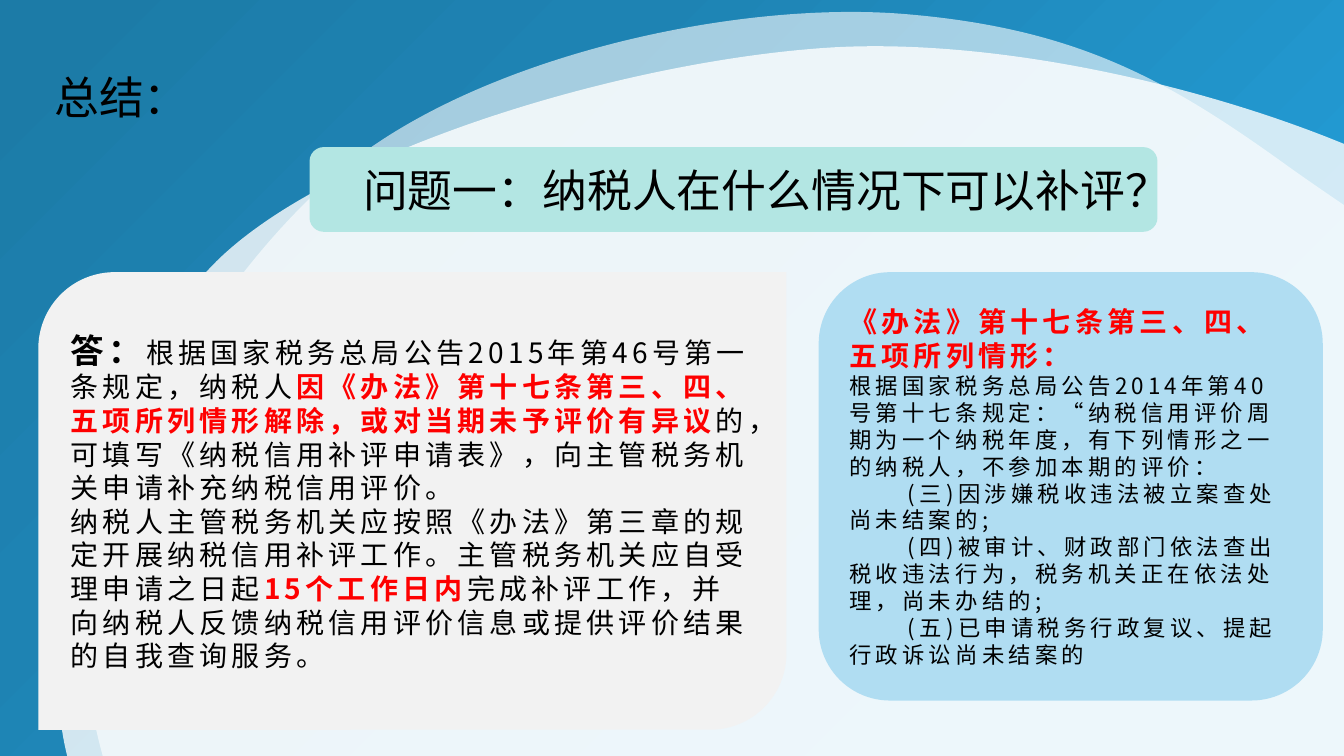
from lxml import etree
from pptx import Presentation
from pptx.dml.color import RGBColor
from pptx.enum.shapes import MSO_SHAPE
from pptx.enum.text import MSO_ANCHOR, PP_ALIGN
from pptx.oxml.ns import qn
from pptx.util import Inches, Pt

FONT = "Noto Sans CJK SC"
BLACK = RGBColor(0x00, 0x00, 0x00)
RED = RGBColor(0xFE, 0x00, 0x00)
WHITE = RGBColor(0xFF, 0xFF, 0xFF)
GREY = RGBColor(0xF2, 0xF2, 0xF2)
MINT = RGBColor(0xB3, 0xE6, 0xE3)
SKY = RGBColor(0xB0, 0xDD, 0xF2)
RECT = MSO_SHAPE.RECTANGLE
ROUNDED = MSO_SHAPE.ROUNDED_RECTANGLE
DIAGONAL = MSO_SHAPE.ROUND_2_DIAG_RECTANGLE
LEFT = PP_ALIGN.LEFT
MIDDLE = MSO_ANCHOR.MIDDLE
CARD_TOP = 2.7
CLAUSE_INDENT = 0.58

prs = Presentation()
prs.slide_width, prs.slide_height = Inches(13.33), Inches(7.5)
slide = prs.slides.add_slide(prs.slide_layouts[6])
shapes = slide.shapes


def write(frame, paragraphs, spacing=0):
    """Fill frame with (size, first-line indent, [(text, colour, bold, own size)]) rows."""
    frame.word_wrap = True
    for index, (size, indent, runs) in enumerate(paragraphs):
        paragraph = frame.paragraphs[0] if index == 0 else frame.add_paragraph()
        paragraph.alignment = LEFT
        if indent:
            paragraph._p.get_or_add_pPr().set("indent", str(Inches(indent)))
        paragraph.font.name = FONT
        paragraph.font.size = Pt(size)
        for text, colour, bold, own_size in runs:
            run = paragraph.add_run()
            run.text = text
            run.font.size = Pt(own_size or size)
            run.font.bold = bold
            run.font.color.rgb = colour
            run.font.name = FONT
            properties = run._r.get_or_add_rPr()
            properties.set("spc", str(spacing * 100))
            etree.SubElement(properties, qn("a:ea"), typeface=FONT)


def panel(kind, left, top, width, height, colour):
    shape = shapes.add_shape(kind, Inches(left), Inches(top), Inches(width), Inches(height))
    shape.shadow.inherit = False
    shape.line.fill.background()
    shape.fill.solid()
    shape.fill.fore_color.rgb = colour
    shape.text_frame.vertical_anchor = MIDDLE
    return shape


# Blue gradient backdrop, light at the lower right
backdrop = panel(RECT, 0, 0, 13.33, 7.5, WHITE)
backdrop.fill.gradient()
backdrop.fill.gradient_angle = 135
stops = backdrop._element.spPr.find(qn("a:gradFill")).find(qn("a:gsLst"))
stops.clear()
for position, colour in ((0, "239CD5"), (23, "239CD5"), (69, "1E83B3"), (97, "1C7BA7")):
    stop = etree.SubElement(stops, qn("a:gs"), pos=str(position * 1000))
    etree.SubElement(stop, qn("a:srgbClr"), val=colour)

# Translucent white blobs: opacity, start point, then two controls and an end per curve
BLOBS = [
    (60, (12.72, 1.61), [
        (11.55, 0.77), (10.65, 0.28), (8.98, 0.14),
        (7.31, 0), (4.8, 0.55), (3.44, 1.64),
        (2.09, 2.74), (0.73, 5.04), (0.87, 6.71),
        (1, 8.38), (2.89, 12.02), (4.86, 12.92),
        (6.83, 13.81), (12.43, 13.78), (14.29, 12.49),
        (16.15, 11.21), (16.14, 6.87), (16.01, 5.2),
        (15.87, 3.53), (13.89, 2.46), (12.72, 1.61)]),
    (80, (16.53, 4.46), [
        (16.12, 3.42), (15.7, 2.72), (14.32, 1.91),
        (12.94, 1.1), (10.29, 0.36), (8.27, 0.47),
        (6.24, 0.59), (3.29, 1.47), (2.15, 2.59),
        (1.02, 3.71), (-0.06, 6.84), (1.02, 8.27),
        (2.09, 9.69), (7.09, 12.09), (9.71, 12.07),
        (12.33, 12.06), (15.6, 9.29), (16.74, 8.17),
        (17.88, 7.05), (16.93, 5.51), (16.53, 4.46)]),
]
for opacity, start, curve_points in BLOBS:
    builder = shapes.build_freeform(Inches(start[0]), Inches(start[1]))
    builder.add_line_segments([(Inches(x), Inches(y)) for x, y in curve_points], close=True)
    blob = builder.convert_to_shape()
    blob.shadow.inherit = False
    blob.line.fill.background()
    blob.fill.solid()
    blob.fill.fore_color.rgb = WHITE
    white = blob._element.spPr.find(qn("a:solidFill"))[0]
    etree.SubElement(white, qn("a:alpha"), val=str(opacity * 1000))
    # Turn each three straight segments into one cubic curve
    segments = list(blob._element.iter(qn("a:lnTo")))
    for first in range(0, len(curve_points), 3):
        curve = etree.Element(qn("a:cubicBezTo"))
        segments[first].addprevious(curve)
        for segment in segments[first:first + 3]:
            curve.append(segment[0])
            segment.getparent().remove(segment)

# Heading
heading = shapes.add_textbox(Inches(0.44), Inches(0.48), Inches(3.64), Inches(0.73))
write(heading.text_frame, [(32, 0, [("总结：", BLACK, False, None)])])
heading.text_frame.paragraphs[0].line_spacing = 1.3

# Answer card
answer = panel(DIAGONAL, 0.38, CARD_TOP, 7.42, 4.54, GREY)
write(answer.text_frame, [
    (20, 0, [
        ("答：", BLACK, True, 24),
        ("根据国家税务总局公告2015年第46号第一条规定，纳税人", BLACK, False, None),
        ("因《办法》第十七条第三、四、五项所列情形解除，或对当期未予评价有异议", RED, True, None),
        ("的，可填写《纳税信用补评申请表》，向主管税务机关申请补充纳税信用评价。", BLACK, False, None)]),
    (20, 0, [
        ("纳税人主管税务机关应按照《办法》第三章的规定开展纳税信用补评工作。"
         "主管税务机关应自受理申请之日起", BLACK, False, None),
        ("15个工作日内", RED, True, None),
        ("完成补评工作，并向纳税人反馈纳税信用评价信息或提供评价结果的自我查询服务。",
         BLACK, False, None)]),
], spacing=3)

# Question banner
question = panel(ROUNDED, 3.07, 1.46, 8.41, 0.84, MINT)
question.text_frame.margin_left = Inches(0.49)
question.text_frame.margin_right = 0
write(question.text_frame, [(32, 0, [("问题一：纳税人在什么情况下可以补评？", BLACK, False, None)])])

# Regulation card
regulation = panel(ROUNDED, 8.12, CARD_TOP, 5, 4.25, SKY)
clauses = [
    "(三)因涉嫌税收违法被立案查处尚未结案的;",
    "(四)被审计、财政部门依法查出税收违法行为，税务机关正在依法处理，尚未办结的;",
    "(五)已申请税务行政复议、提起行政诉讼尚未结案的",
]
write(regulation.text_frame, [
    (20, 0, [("《办法》第十七条第三、四、五项所列情形：", RED, True, None)]),
    (16, 0, [("根据国家税务总局公告2014年第40号第十七条规定：“纳税信用评价周期为一个纳税年度，"
              "有下列情形之一的纳税人，不参加本期的评价：", BLACK, False, None)]),
] + [(16, CLAUSE_INDENT, [(clause, BLACK, False, None)]) for clause in clauses], spacing=3)

prs.save("out.pptx")
